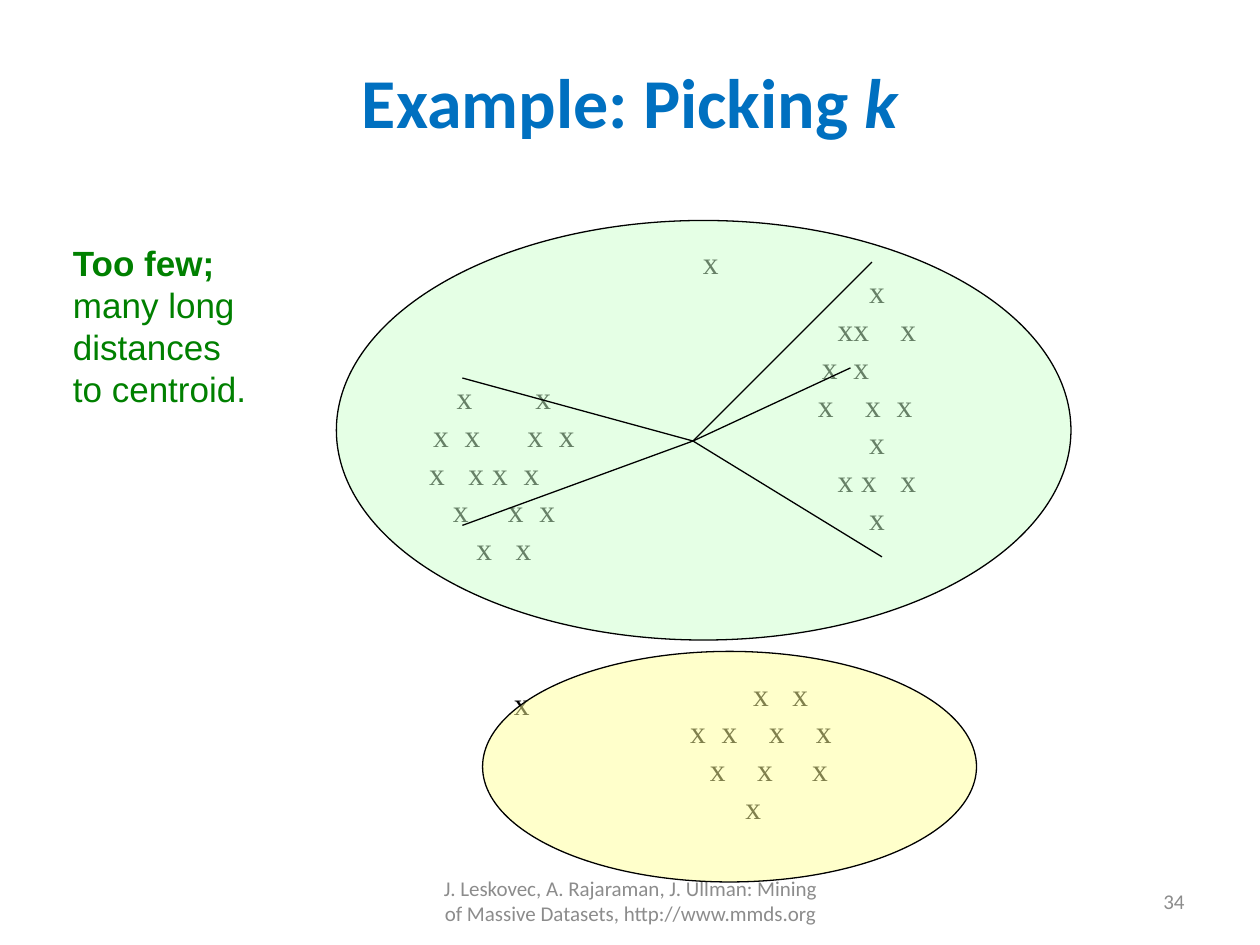
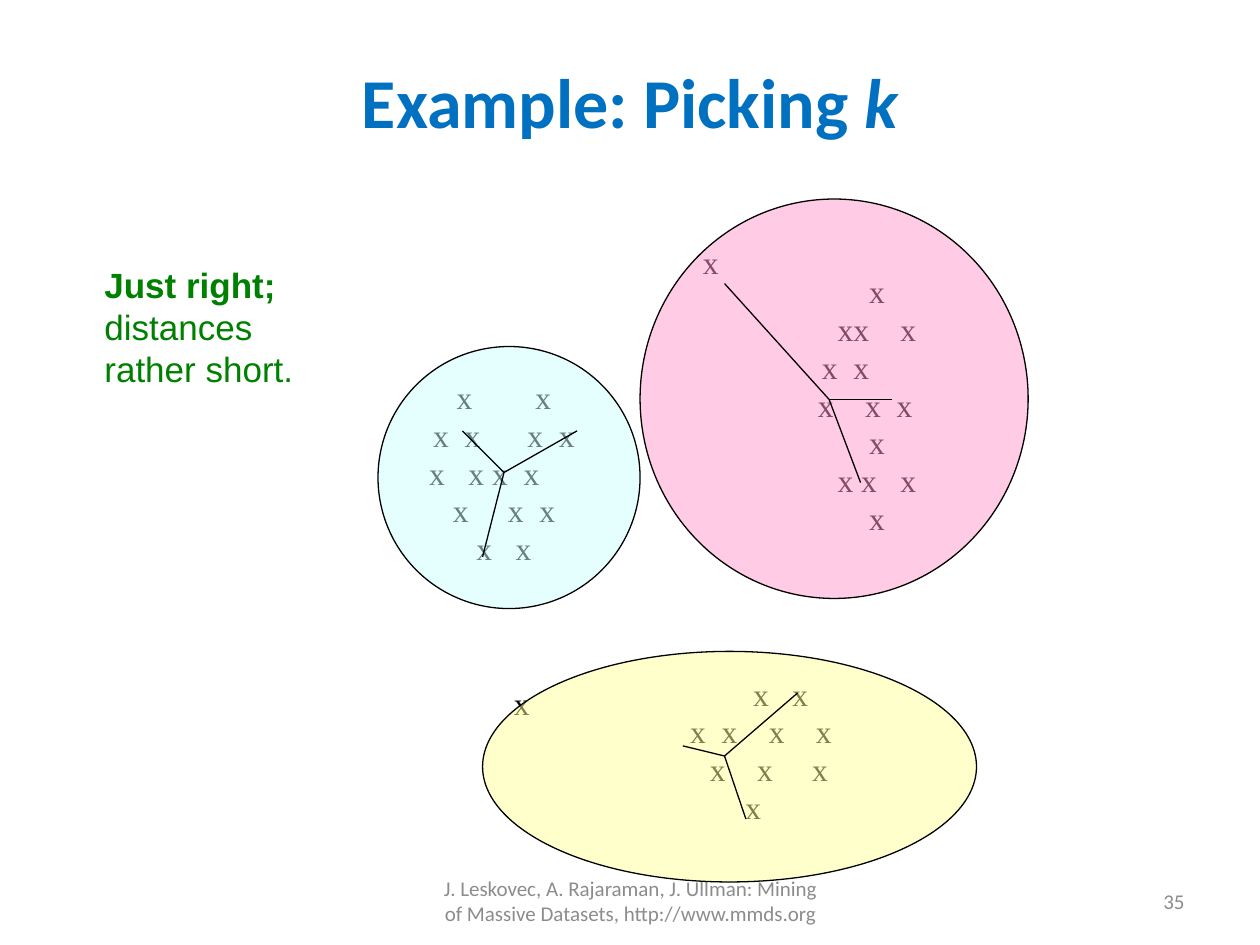
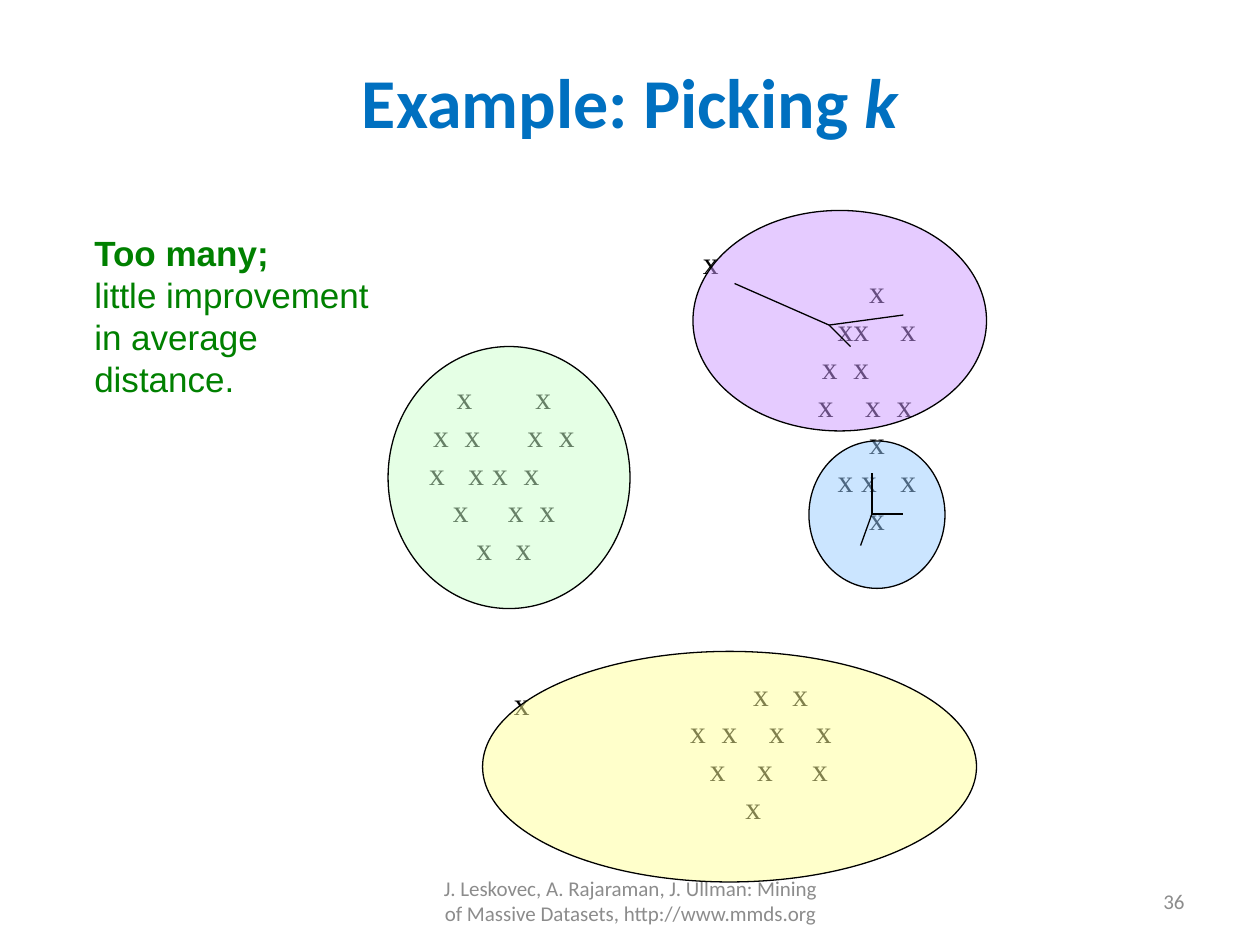
from lxml.etree import SubElement
from pptx import Presentation
from pptx.dml.color import RGBColor
from pptx.enum.shapes import MSO_CONNECTOR, MSO_SHAPE
from pptx.enum.text import MSO_ANCHOR, MSO_AUTO_SIZE, PP_ALIGN
from pptx.oxml.ns import qn
from pptx.util import Inches, Pt

BLUE, GREEN, GRAY, BLACK = "0070C0", "008000", "8C8C8C", "000000"
FOOTER = ("J. Leskovec, A. Rajaraman, J. Ullman: Mining of Massive Datasets, "
          "http://www.mmds.org")
FIRST_NUMBER = 34
POINT_CLOUDS = [
    ((3, 2.5, 2, 2.5),
     ["x        x", "x  x      x  x", "x   x x  x     ", "x     x  x", "x   x"]),
    ((6, 1.67, 1.92, 3.08),
     ["x", "xx    x", "x  x        ", "x    x  x   ", "x", "x x   x", "x"]),
    ((5, 5.08, 2.08, 1.75),
     ["     x   x", "x  x    x    x", "  x    x     x", "x  "]),
]
OUTLIERS = [(5.48, 1.88, 0.37, 0.5), (3.98, 5.38, 0.37, 0.5)]
BOTTOM_CLUSTER = ((3.83, 5.17, 3.92, 1.83), "FFFF99")
SLIDES = [
    {"caption": ["Too few;", "many long", "distances", "to centroid."],
     "caption_box": (0.48, 1.87, 1.59, 1.45),
     "clusters": [((2.67, 1.75, 5.83, 3.33), "CCFFCC"), BOTTOM_CLUSTER],
     "spokes": {(5.5, 3.5): [(3.67, 3), (3.67, 4.17), (7, 4.42), (6.75, 2.92),
                             (6.92, 2.08)]}},
    {"caption": ["Just right;", "distances", "rather short."],
     "caption_box": (0.73, 2.04, 1.71, 1.11),
     "clusters": [BOTTOM_CLUSTER, ((3, 2.75, 2.08, 2.08), "CCFFFF"),
                  ((5.08, 1.58, 3.08, 3.17), "FF99CC")],
     "spokes": {(4, 3.75): [(3.67, 3.42), (4.58, 3.42), (3.83, 4.42)],
                (5.75, 6): [(5.42, 5.92), (6.33, 5.5), (5.92, 6.5)],
                (6.58, 3.17): [(5.75, 2.25), (7.08, 3.17), (6.83, 3.83)]}},
    {"caption": ["Too many;", "little improvement", "in average", "distance."],
     "caption_box": (0.65, 1.79, 2.4, 1.45),
     "clusters": [BOTTOM_CLUSTER, ((3.08, 2.75, 1.92, 2.08), "CCFFCC"),
                  ((5.5, 1.67, 2.33, 1.75), "CC99FF"),
                  ((6.42, 3.5, 1.08, 1.17), "99CCFF")],
     "spokes": {(6.58, 2.58): [(5.83, 2.25), (7.17, 2.5), (6.75, 2.75)],
                (6.92, 4.08): [(6.92, 3.75), (7.17, 4.08), (6.83, 4.33)]}},
]


def inches(values):
    """Convert a tuple of numbers to lengths."""
    return [Inches(value) for value in values]


def style(font, name, size, color, bold=False):
    """Set the look of a font."""
    font.name, font.size, font.bold = name, Pt(size), bold
    font.color.rgb = RGBColor.from_string(color)


def write(shape, lines, name, size, color, align=PP_ALIGN.LEFT, wrap=False):
    """Fill a shape with one paragraph per line."""
    frame = shape.text_frame
    frame.text = "\n".join(lines)
    frame.word_wrap = wrap
    for paragraph in frame.paragraphs:
        paragraph.alignment = align
        style(paragraph.font, name, size, color)
    return frame


def add_title(slide):
    """Write the shared title."""
    title = slide.shapes.title
    title.left, title.top, title.width, title.height = inches((0.5, 0.3, 9, 0.99))
    title.text_frame.vertical_anchor = MSO_ANCHOR.MIDDLE
    paragraph = title.text_frame.paragraphs[0]
    paragraph.alignment = PP_ALIGN.CENTER
    style(paragraph.font, "Calibri", 40, BLUE, True)
    paragraph.add_run().text = "Example: Picking "
    letter = paragraph.add_run()
    letter.text, letter.font.italic = "k", True


def add_footer(slide, number):
    """Write the source line and the slide number."""
    for box, text, align in [((3.42, 6.95, 3.17, 0.4), FOOTER, PP_ALIGN.CENTER),
                             ((7.17, 6.95, 2.33, 0.4), str(number), PP_ALIGN.RIGHT)]:
        shape = slide.shapes.add_textbox(*inches(box))
        frame = write(shape, [text], "Calibri", 12, GRAY, align, True)
        frame.vertical_anchor = MSO_ANCHOR.MIDDLE


def add_label(shapes, box, lines, name, size, color):
    """Add a text box that grows with its text."""
    frame = write(shapes.add_textbox(*inches(box)), lines, name, size, color)
    frame.auto_size = MSO_AUTO_SIZE.SHAPE_TO_FIT_TEXT
    return frame


def add_ellipse(slide, box):
    """Add an ellipse without shadow."""
    ellipse = slide.shapes.add_shape(MSO_SHAPE.OVAL, *inches(box))
    ellipse.shadow.inherit = False
    return ellipse


def add_points(slide):
    """Add the data points that every slide shows."""
    for box, rows in POINT_CLOUDS:
        cloud = add_ellipse(slide, box)
        cloud.fill.background()
        cloud.line.fill.background()
        frame = write(cloud, rows, "Times New Roman", 18, BLACK, PP_ALIGN.CENTER)
        frame.vertical_anchor = MSO_ANCHOR.MIDDLE
    for box in OUTLIERS:
        add_label(slide.shapes, box, ["x"], "Times New Roman", 18, BLACK)


def set_outline(line):
    """Draw a thin black line."""
    line.color.rgb = RGBColor.from_string(BLACK)
    line.width = Pt(0.75)


def add_cluster(slide, box, color):
    """Add a half-transparent cluster."""
    cluster = add_ellipse(slide, box)
    cluster.fill.solid()
    cluster.fill.fore_color.rgb = RGBColor.from_string(color)
    fill_color = cluster.fill._xPr.find(qn("a:solidFill"))[0]
    SubElement(fill_color, qn("a:alpha"), val="50000")
    set_outline(cluster.line)


def add_spoke(shapes, centroid, end):
    """Draw a distance from a centroid."""
    spoke = shapes.add_connector(MSO_CONNECTOR.STRAIGHT, *inches(centroid + end))
    set_outline(spoke.line)
    SubElement(spoke._element.spPr, qn("a:effectLst"))


def build_slide(presentation, number, content):
    """Build one slide."""
    slide = presentation.slides.add_slide(presentation.slide_layouts[5])
    add_title(slide)
    add_footer(slide, number)
    add_points(slide)
    for box, color in content["clusters"]:
        add_cluster(slide, box, color)
    group = slide.shapes.add_group_shape()
    for centroid, ends in content["spokes"].items():
        for end in ends:
            add_spoke(group.shapes, centroid, end)
    caption = add_label(group.shapes, content["caption_box"], content["caption"],
                        "Arial", 20, GREEN)
    caption.paragraphs[0].font.bold = True


def main():
    """Build the presentation."""
    presentation = Presentation()
    presentation.slide_width, presentation.slide_height = inches((10, 7.5))
    for number, content in enumerate(SLIDES, FIRST_NUMBER):
        build_slide(presentation, number, content)
    presentation.save("out.pptx")


if __name__ == "__main__":
    main()
